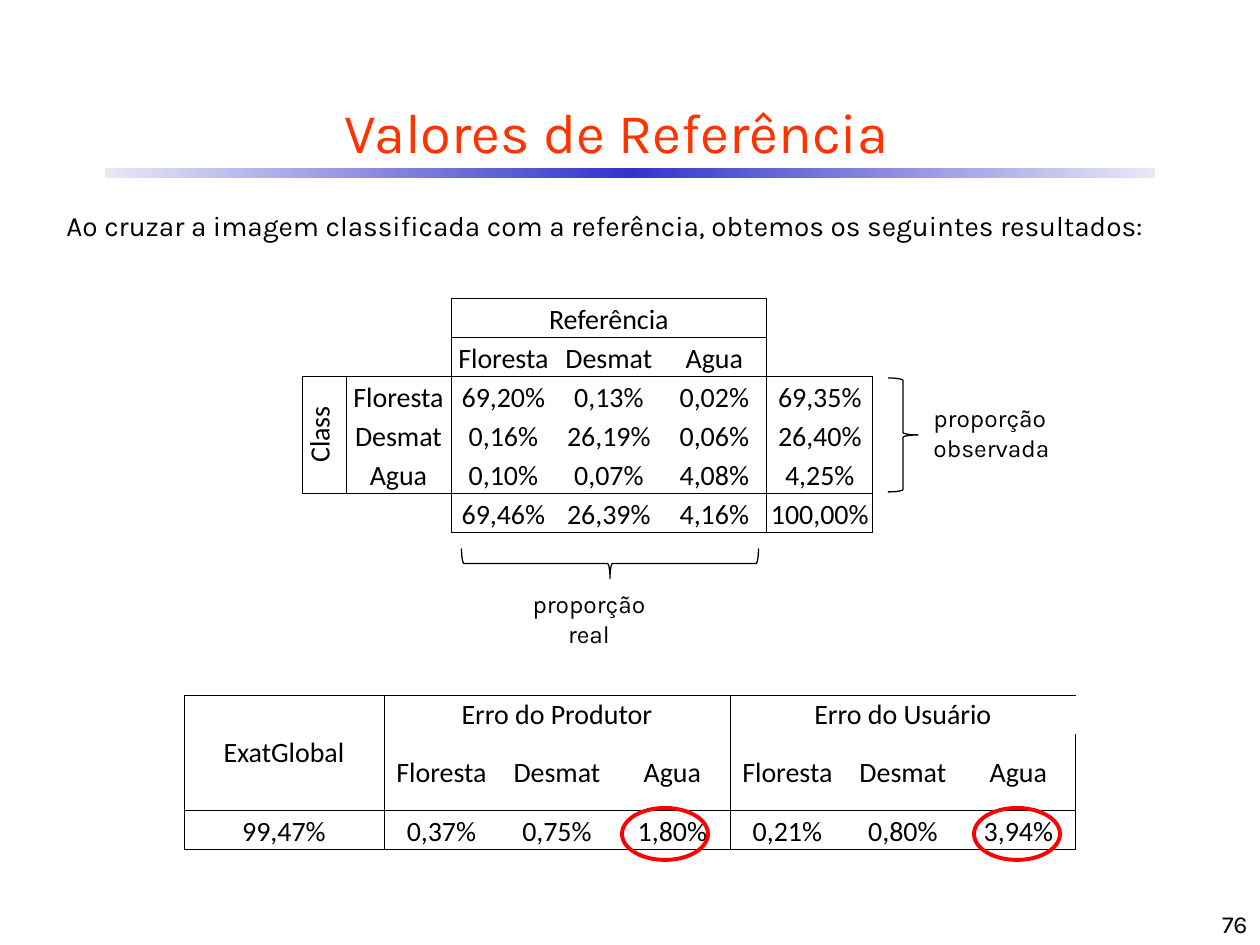
from copy import deepcopy
from dataclasses import dataclass

from lxml import etree
from pptx import Presentation
from pptx import util as u
from pptx.dml.color import RGBColor as RGB
from pptx.enum import shapes, text
from pptx.oxml import ns

SCALE = 914400 / 126
KIND = shapes.MSO_SHAPE
MID, LOW = text.MSO_ANCHOR.MIDDLE, text.MSO_ANCHOR.BOTTOM
LEFT, MIDST, RIGHT = text.PP_ALIGN.LEFT, text.PP_ALIGN.CENTER, text.PP_ALIGN.RIGHT
PLAIN = "{2D5ABB26-0587-4C30-8999-92F81FD0307C}"  # table style without grid


@dataclass(frozen=True)
class Theme:
    ink: str = "000000"
    head: str = "FF3300"
    mark: str = "FF0000"
    bar: tuple = ("E8E8F6", "3333CC", "E8E8F6")
    font: str = "Karla"
    grid: str = "Calibri"
    title: int = 32
    body: int = 16
    note: int = 14


THEME = Theme()


def px(n):
    return u.Emu(round(n * SCALE))


def style(par, size, color=THEME.ink, font=THEME.font, align=LEFT):
    par.alignment = align
    par.font.size = u.Pt(size)
    par.font.name = font
    par.font.color.rgb = RGB.from_string(color)


def label(slide, box, lines, size, color=THEME.ink, align=LEFT,
          anchor=text.MSO_ANCHOR.TOP):
    frame = slide.shapes.add_textbox(*map(px, box)).text_frame
    frame.word_wrap = True
    frame.vertical_anchor = anchor
    frame.text = "\n".join(lines)
    for par in frame.paragraphs:
        style(par, size, color, align=align)


def outline(slide, kind, box, color, width, turn=0):
    shape = slide.shapes.add_shape(kind, *map(px, box))
    shape.shadow.inherit = False
    shape.fill.background()
    shape.line.color.rgb = RGB.from_string(color)
    shape.line.width = u.Pt(width)
    shape.rotation = turn


def band(slide, box):
    shape = slide.shapes.add_shape(KIND.RECTANGLE, *map(px, box))
    shape.shadow.inherit = False
    shape.line.fill.background()
    shape.fill.gradient()
    shape.fill.gradient_angle = 0
    first = shape.fill._xPr.find(".//" + ns.qn("a:gs"))
    first.addnext(deepcopy(first))
    for i, (stop, color) in enumerate(zip(shape.fill.gradient_stops, THEME.bar)):
        stop.position = i / 2
        stop.color.rgb = RGB.from_string(color)


def edges(boxes):
    """Cell edges around each (top, left, bottom, right) block of cells."""
    found = set()
    for top, left, low, right in boxes:
        for col in range(left, right + 1):
            found |= {("h", top, col), ("h", low + 1, col)}
        for row in range(top, low + 1):
            found |= {("v", row, left), ("v", row, right + 1)}
    return found


def border(cell, row, col, drawn):
    props = cell._tc.get_or_add_tcPr()
    sides = {"lnL": ("v", row, col), "lnR": ("v", row, col + 1),
             "lnT": ("h", row, col), "lnB": ("h", row + 1, col)}
    for tag, edge in sides.items():
        line = etree.SubElement(props, ns.qn("a:" + tag), w=str(u.Pt(0.5)))
        if edge in drawn:
            fill = etree.SubElement(line, ns.qn("a:solidFill"))
            etree.SubElement(fill, ns.qn("a:srgbClr"), val=THEME.ink)
        else:
            etree.SubElement(line, ns.qn("a:noFill"))


def table(slide, left, top, cols, rows, data, boxes, spans, middle):
    """Draw a table; cells in the set `middle` are centred vertically."""
    frame = slide.shapes.add_table(len(rows), len(cols), px(left), px(top),
                                   px(sum(cols)), px(sum(rows)))
    grid = frame.table
    grid.first_row = grid.horz_banding = False
    grid._tbl.tblPr.find(ns.qn("a:tableStyleId")).text = PLAIN
    for col, width in zip(grid.columns, cols):
        col.width = px(width)
    for row, height in zip(grid.rows, rows):
        row.height = px(height)
    drawn = edges(boxes)
    for r, line in enumerate(data):
        for c, word in enumerate(line):
            cell = grid.cell(r, c)
            border(cell, r, c, drawn)
            cell.fill.background()
            cell.margin_left = cell.margin_right = cell.margin_top = px(1)
            cell.margin_bottom = 0
            cell.vertical_anchor = MID if (r, c) in middle else LOW
            cell.text = word
            style(cell.text_frame.paragraphs[0], THEME.body,
                  font=THEME.grid, align=MIDST)
    for top, left, low, right in spans:
        grid.cell(top, left).merge(grid.cell(low, right))
    return grid


def cross(slide):
    data = [
        ["", "", "Referência", "", "", ""],
        ["", "", "Floresta", "Desmat", "Agua", ""],
        ["Class", "Floresta", "69,20%", "0,13%", "0,02%", "69,35%"],
        ["", "Desmat", "0,16%", "26,19%", "0,06%", "26,40%"],
        ["", "Agua", "0,10%", "0,07%", "4,08%", "4,25%"],
        ["", "", "69,46%", "26,39%", "4,16%", "100,00%"],
    ]
    head, side = (0, 2, 0, 4), (2, 0, 4, 0)
    boxes = [head, (1, 2, 1, 4), side, (2, 1, 4, 1), (2, 2, 4, 4),
             (2, 5, 4, 5), (5, 2, 5, 4), (5, 5, 5, 5)]
    grid = table(slide, 302, 298, [44, 105, 105, 106, 105, 106], [39] * 6,
                 data, boxes, [head, side], {(2, 0)})
    grid.cell(2, 0)._tc.get_or_add_tcPr().set("vert", "vert270")


def errors(slide):
    names = ["Floresta", "Desmat", "Agua"]
    data = [
        ["ExatGlobal", "Erro do Produtor", "", "", "Erro do Usuário", "", ""],
        ["", *names, *names],
        ["99,47%", "0,37%", "0,75%", "1,80%", "0,21%", "0,80%", "3,94%"],
    ]
    blocks = [(0, 0), (1, 3), (4, 6)]
    boxes = [(top, a, low, b) for a, b in blocks for top, low in ((0, 1), (2, 2))]
    spans = [(0, 0, 1, 0), (0, 1, 0, 3), (0, 4, 0, 6)]
    middle = {(r, c) for r in range(2) for c in range(7)}
    table(slide, 184, 695, [200] + [115, 116, 115] * 2, [39, 76, 39],
          data, boxes, spans, middle)


def main():
    deck = Presentation()
    deck.slide_width, deck.slide_height = px(1260), px(945)
    slide = deck.slides.add_slide(deck.slide_layouts[6])

    # Heading, page number and lead sentence
    band(slide, (105, 168, 1050, 10))
    label(slide, (34, 84, 1166, 95), ["Valores de Referência"], THEME.title,
          THEME.head, MIDST, MID)
    label(slide, (998, 882, 262, 63), ["76"], THEME.note, align=RIGHT, anchor=LOW)
    label(slide, (54, 202, 1206, 47),
          ["Ao cruzar a imagem classificada com a referência, "
           "obtemos os seguintes resultados:"], THEME.body)

    # Tables
    cross(slide)
    errors(slide)

    # Braces with their notes
    outline(slide, KIND.RIGHT_BRACE, (595, 415, 30, 297), THEME.ink, 0.75, 90)
    label(slide, (516, 583, 146, 72), ["proporção real"], THEME.note, align=MIDST)
    outline(slide, KIND.RIGHT_BRACE, (888, 378, 30, 114), THEME.ink, 0.75)
    label(slide, (921, 397, 142, 72), ["proporção", "observada"], THEME.note)

    # Rings around the water errors
    for left in (622, 974):
        outline(slide, KIND.OVAL, (left, 808, 86, 52), THEME.mark, 2.25)

    deck.save("out.pptx")


if __name__ == "__main__":
    main()
